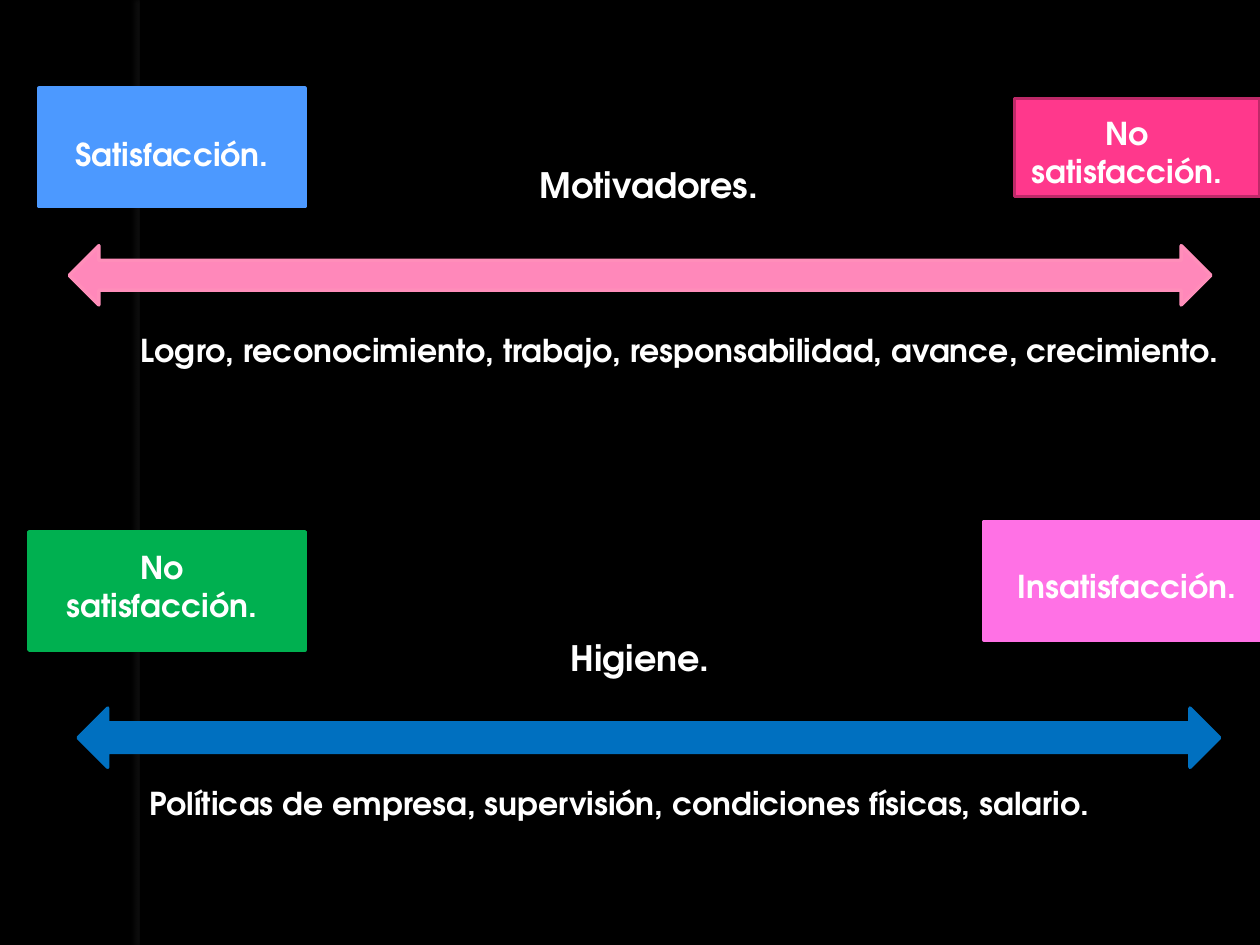
from lxml.etree import SubElement
from pptx import Presentation
from pptx.dml.color import RGBColor
from pptx.enum.shapes import MSO_SHAPE
from pptx.enum.text import MSO_AUTO_SIZE, PP_ALIGN
from pptx.oxml.ns import qn
from pptx.util import Inches, Pt

COLUMNS = 128
CELL = 10 / COLUMNS
FONT = "TeX Gyre Adventor"
COLORS = {
    "black": "000000", "glow": "333333", "white": "FFFFFF",
    "sky": "4C99FF", "pink": "FF388C", "dark pink": "BD2968",
    "rose": "FF88BA", "light rose": "FF8EBA",
    "green": "00B050", "orchid": "FF71E5", "blue": "0070C0",
}


def color(name):
    return RGBColor.from_string(COLORS[name])


class FactorSlide:
    """Holds the style and the slide; places are (column, row, columns, rows)."""

    def __init__(self, presentation):
        self.slide = presentation.slides.add_slide(presentation.slide_layouts[6])
        background = self.slide.background.fill
        background.solid()
        background.fore_color.rgb = color("black")

    def place(self, grid):
        return [Inches(round(cells * CELL, 2)) for cells in grid]

    def block(self, grid, fill, line=None, kind=MSO_SHAPE.RECTANGLE):
        block = self.slide.shapes.add_shape(kind, *self.place(grid))
        block.shadow.inherit = False
        block.fill.solid()
        block.fill.fore_color.rgb = color(fill)
        block.line.color.rgb = color(line or fill)
        block.line.width = Pt(2)
        return block

    def arrow(self, column, row, fill, line=None):
        self.block((column, row, 116, 6), fill, line, MSO_SHAPE.LEFT_RIGHT_ARROW)

    def band(self, grid):
        """Vertical strip with a soft shadow to its left."""
        band = self.block(grid, "black")
        band.line.fill.background()
        effects = band._element.spPr.find(qn("a:effectLst"))
        shadow = SubElement(effects, qn("a:outerShdw"), blurRad=str(Pt(3)),
                            dist=str(Pt(3)), dir="10800000", rotWithShape="0")
        tint = SubElement(shadow, qn("a:srgbClr"), val=COLORS["glow"])
        SubElement(tint, qn("a:alpha"), val="25000")

    def label(self, text, grid, size=18, align=PP_ALIGN.CENTER):
        frame = self.slide.shapes.add_textbox(*self.place(grid)).text_frame
        frame.word_wrap = True
        frame.auto_size = MSO_AUTO_SIZE.SHAPE_TO_FIT_TEXT
        paragraph = frame.paragraphs[0]
        paragraph.alignment = align
        run = paragraph.add_run()
        run.text = text
        run.font.name = FONT
        run.font.size = Pt(size)
        run.font.bold = True
        run.font.color.rgb = color("white")

    def heading(self, text, column, row):
        self.label(text, (column, row, 30, 5.6), size=20)

    def factors(self, text, column, row):
        self.label(text, (column, row, 119, 5.2), align=PP_ALIGN.LEFT)


def main():
    presentation = Presentation()
    presentation.slide_width = Inches(10)
    presentation.slide_height = Inches(7.5)
    page = FactorSlide(presentation)
    page.band((14.2, 0, 1, 96))

    page.block((4, 9, 27, 12), "sky")
    page.label("Satisfacción.", (5, 13, 25, 5.2))
    page.block((103, 10, 25, 10), "pink", "dark pink")
    page.label("No satisfacción.", (101, 11, 27, 9))
    page.arrow(7, 25, "rose", "light rose")
    page.heading("Motivadores.", 51, 16)
    page.factors("Logro, reconocimiento, trabajo, responsabilidad, avance, crecimiento.",
                 13, 33)

    page.block((3, 54, 28, 12), "green")
    page.label("No satisfacción.", (3, 55, 27, 9))
    page.block((100, 53, 28, 12), "orchid")
    page.label("Insatisfacción.", (101, 57, 27, 5.2))
    page.arrow(8, 72, "blue")
    page.heading("Higiene.", 50, 64)
    page.factors("Políticas de empresa, supervisión, condiciones físicas, salario.",
                 14, 79)

    presentation.save("out.pptx")


if __name__ == "__main__":
    main()
